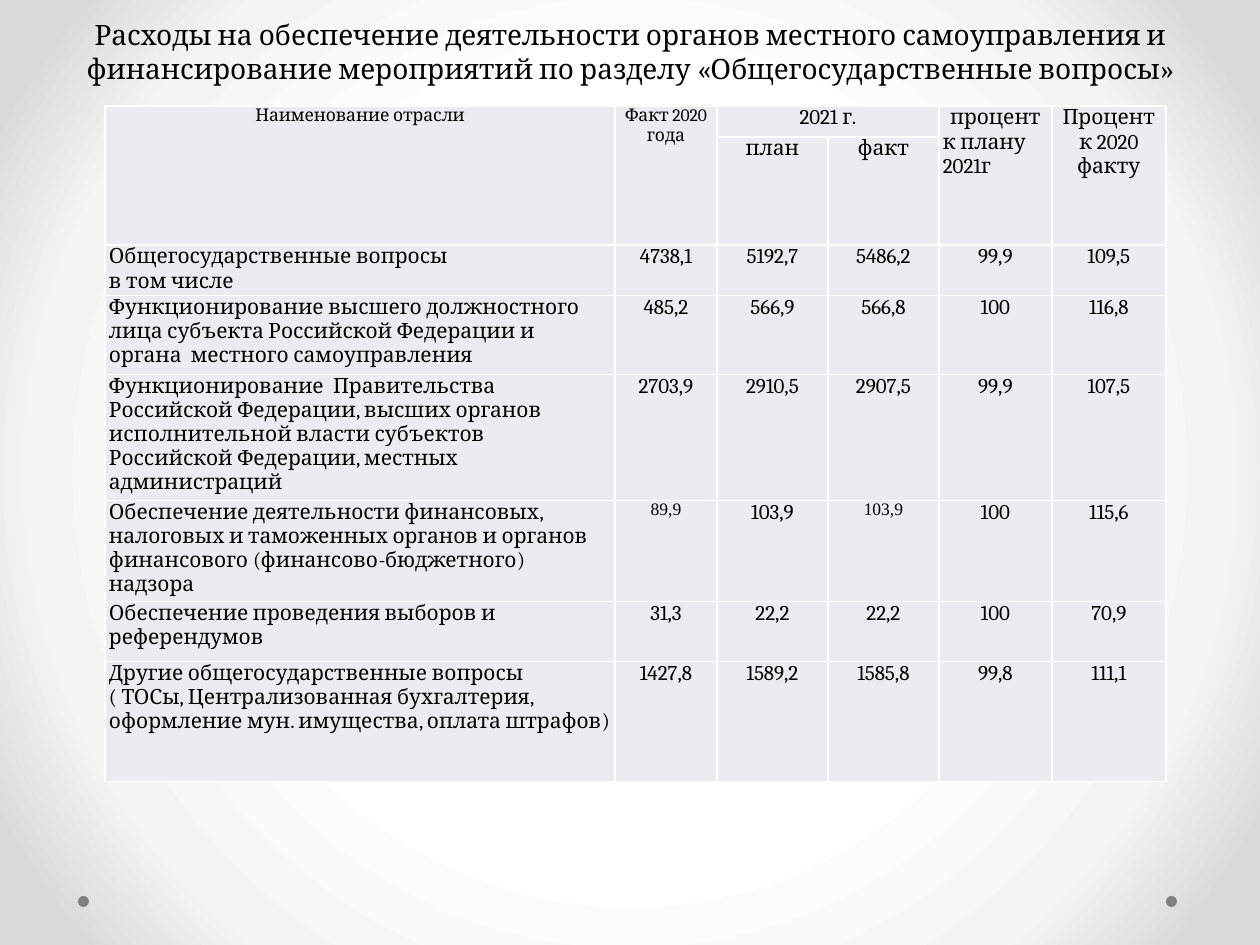
from dataclasses import dataclass
from pptx import Presentation
from pptx.dml.color import RGBColor as RGB
from pptx.enum.shapes import MSO_SHAPE as Shape
from pptx.enum.text import MSO_ANCHOR as Anchor, PP_ALIGN as Align
from pptx.oxml import parse_xml
from pptx.oxml.ns import nsdecls, qn
from pptx.util import Pt


@dataclass(frozen=True)
class Theme:
    main: str = "Cambria"
    alt: str = "Times New Roman"
    ink: str = "000000"
    cell: str = "EAECF2"
    rule: str = "FFFFFF"
    dot: str = "808080"
    glow: tuple = ((50, "FFFFFF"), (76, "F4F4F4"), (92, "DADADA"))
    head: int = 16
    body: int = 12
    small: int = 10


THEME = Theme()
TITLE = ("Расходы на обеспечение деятельности органов местного самоуправления и "
         "финансирование мероприятий по разделу «Общегосударственные вопросы»")
COLS = (510, 102, 111, 111, 113, 114)
ROWS = (31, 108, 49, 79, 110, 89, 60, 120)
GRID = (
    ("Наименование отрасли", "Факт 2020 года", "2021 г.", "",
     "процент\nк плану 2021г", "Процент к 2020\nфакту"),
    ("", "", "план", "факт", "", ""),
    ("Общегосударственные вопросы\nв том числе",
     "4738,1", "5192,7", "5486,2", "99,9", "109,5"),
    ("Функционирование высшего должностного лица субъекта Российской Федерации "
     "и органа  местного самоуправления",
     "485,2", "566,9", "566,8", "100", "116,8"),
    ("Функционирование  Правительства Российской Федерации, высших органов "
     "исполнительной власти субъектов  Российской Федерации, местных администраций",
     "2703,9", "2910,5", "2907,5", "99,9", "107,5"),
    ("Обеспечение деятельности финансовых, налоговых и таможенных органов и "
     "органов финансового (финансово-бюджетного) надзора",
     "89,9", "103,9", "103,9", "100", "115,6"),
    ("Обеспечение проведения выборов и референдумов",
     "31,3", "22,2", "22,2", "100", "70,9"),
    ("Другие общегосударственные вопросы\v( ТОСы, Централизованная бухгалтерия, "
     "оформление мун. имущества, оплата штрафов)",
     "1427,8", "1589,2", "1585,8", "99,8", "111,1"),
)
SPANS = (((0, 0), (1, 0)), ((0, 1), (1, 1)), ((0, 2), (0, 3)),
         ((0, 4), (1, 4)), ((0, 5), (1, 5)))
STYLES = {
    (0, 0): (THEME.main, THEME.small),
    (0, 1): (THEME.main, THEME.small),
    (5, 1): (THEME.alt, THEME.small),
    (5, 3): (THEME.alt, THEME.small),
}


def px(n):
    return round(n * 914400 / 126)


def paint(fill, color):
    fill.solid()
    fill.fore_color.rgb = RGB.from_string(color)


def style(para, size, face, align):
    para.alignment = align
    para.font.size = Pt(size)
    para.font.name = face
    paint(para.font.fill, THEME.ink)


def set_back(slide):
    slide.background.fill.solid()
    stops = "".join(f'<a:gs pos="{pos * 1000}"><a:srgbClr val="{color}"/></a:gs>'
                    for pos, color in THEME.glow)
    grad = parse_xml(
        f'<a:gradFill {nsdecls("a")} rotWithShape="1"><a:gsLst>{stops}</a:gsLst>'
        '<a:path path="circle"><a:fillToRect l="50000" t="50000" r="50000" b="50000"/>'
        '</a:path></a:gradFill>')
    props = next(slide.element.iter(qn("p:bgPr")))
    props.replace(props[0], grad)


def add_dot(slide, left):
    dot = slide.shapes.add_shape(Shape.OVAL, px(left), px(896), px(11), px(11))
    dot.shadow.inherit = False
    paint(dot.fill, THEME.dot)
    dot.line.fill.background()


def add_title(slide):
    box = slide.shapes.add_textbox(px(64), px(-43), px(1134), px(134))
    frame = box.text_frame
    frame.word_wrap = True
    frame.vertical_anchor = Anchor.BOTTOM
    frame.text = TITLE
    style(frame.paragraphs[0], THEME.head, THEME.main, Align.CENTER)


def set_rules(cell):
    props = cell._tc.get_or_add_tcPr()
    for spot, side in enumerate("LRTB"):
        props.insert(spot, parse_xml(
            f'<a:ln{side} {nsdecls("a")} w="{Pt(1)}"><a:solidFill>'
            f'<a:srgbClr val="{THEME.rule}"/></a:solidFill></a:ln{side}>'))


def fill_cell(cell, row, col):
    cell.margin_left = cell.margin_right = px(4)
    cell.margin_top = cell.margin_bottom = 0
    cell.text = GRID[row][col]
    face, size = STYLES.get((row, col), (THEME.main, THEME.body))
    for spot, para in enumerate(cell.text_frame.paragraphs):
        left = (col == 0 and row > 1) or (row == 0 and col == 4 and spot > 0)
        style(para, size, face, Align.LEFT if left else Align.CENTER)
    paint(cell.fill, THEME.cell)
    set_rules(cell)


def add_grid(slide):
    table = slide.shapes.add_table(len(ROWS), len(COLS), px(105), px(106),
                                   px(sum(COLS)), px(sum(ROWS))).table
    table.first_row = table.horz_banding = False
    for col, width in zip(table.columns, COLS):
        col.width = px(width)
    for row, height in zip(table.rows, ROWS):
        row.height = px(height)
    for row in range(len(ROWS)):
        for col in range(len(COLS)):
            fill_cell(table.cell(row, col), row, col)
    for start, end in SPANS:
        table.cell(*start).merge(table.cell(*end))


def main():
    deck = Presentation()
    deck.slide_width, deck.slide_height = px(1260), px(945)
    slide = deck.slides.add_slide(deck.slide_layouts[6])
    set_back(slide)
    for left in (1166, 78):
        add_dot(slide, left)
    add_title(slide)
    add_grid(slide)
    deck.save("out.pptx")


if __name__ == "__main__":
    main()
